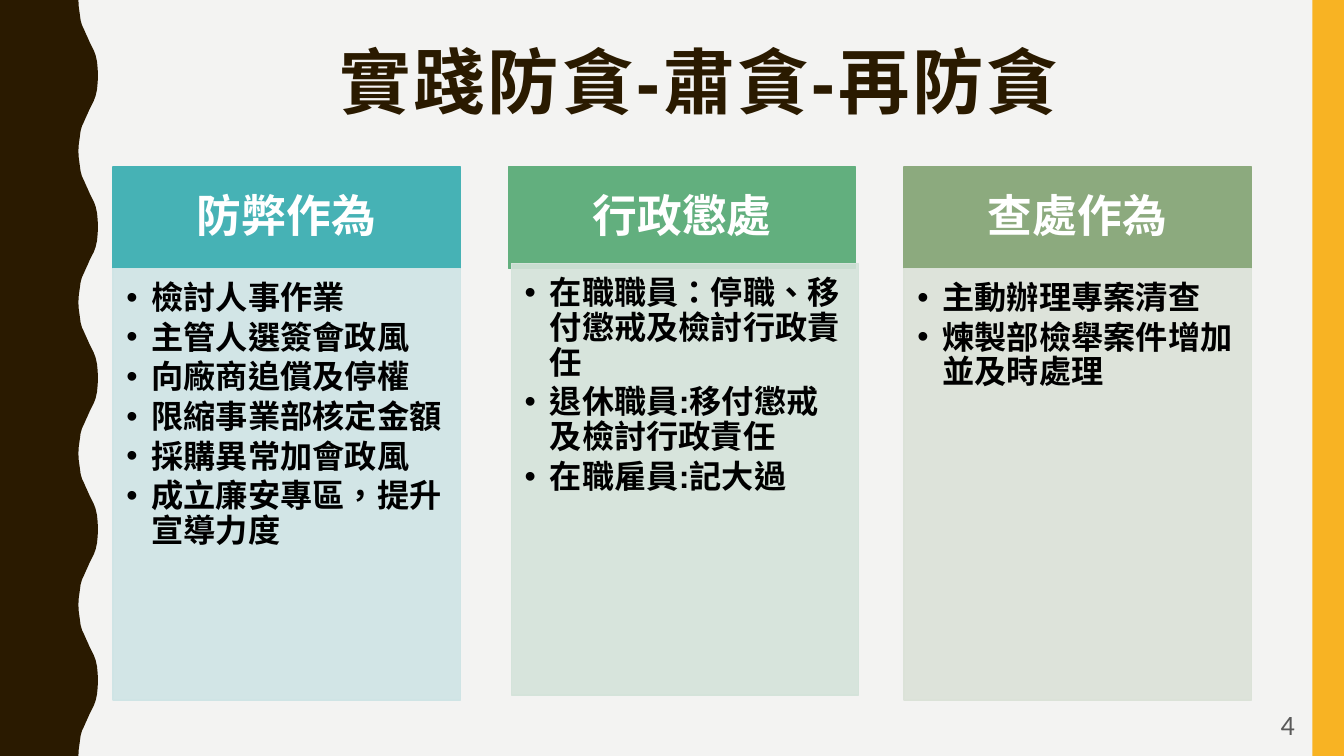
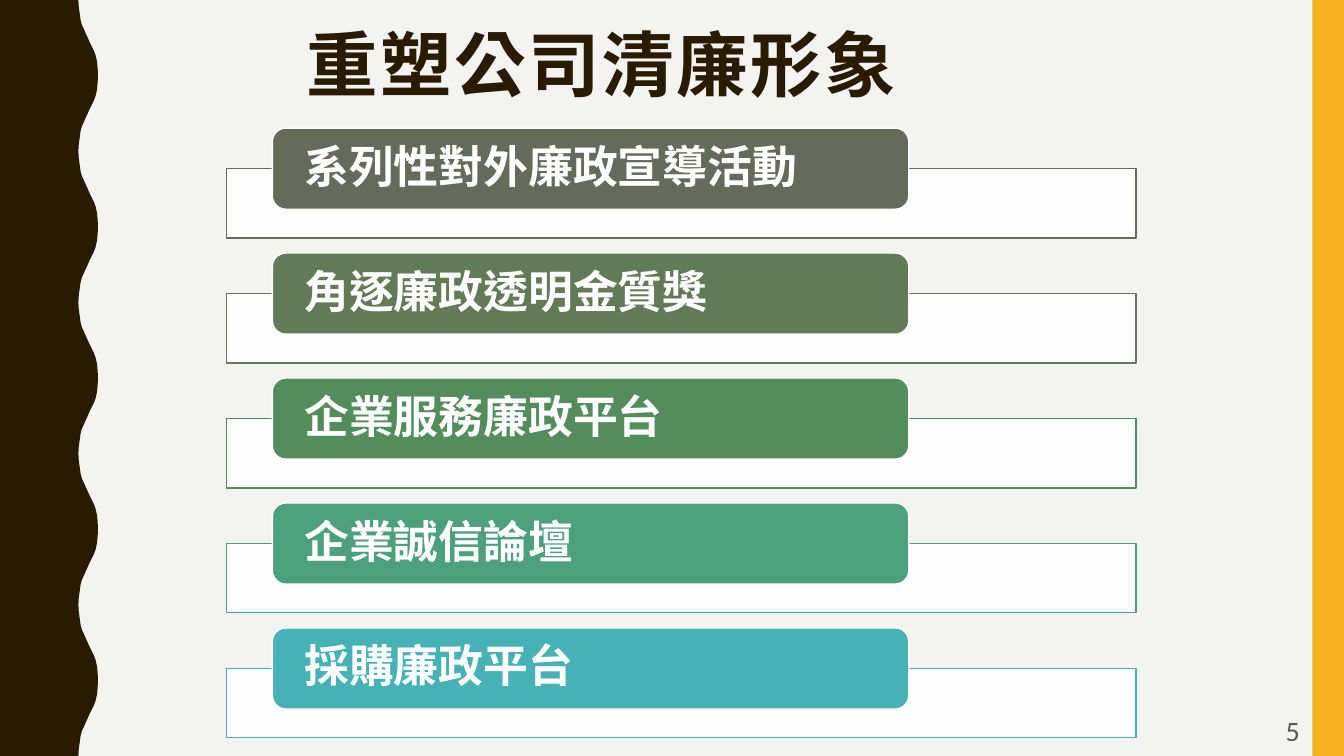
from lxml.etree import SubElement
from pptx import Presentation
from pptx.dml.color import RGBColor
from pptx.enum.shapes import MSO_SHAPE
from pptx.enum.text import MSO_ANCHOR, MSO_AUTO_SIZE, PP_ALIGN
from pptx.oxml.ns import qn
from pptx.util import Pt

PAGE_WIDTH, PAGE_HEIGHT = 960, 540
BROWN, AMBER, PAPER, WHITE, BLACK, GREY = (
    "2A1A00", "F8B323", "F3F3F2", "FFFFFF", "000000", "595959")

# Text formats used on both slides
TITLE = {"name": "Arial", "size": Pt(51), "bold": True, "color": BROWN}
LABEL = {"name": "Calibri", "size": Pt(32), "bold": True, "color": WHITE}
ITEM = {"name": "Calibri", "size": Pt(23), "bold": True, "color": BLACK}
NUMBER = {"name": "Calibri", "size": Pt(20), "bold": False, "color": GREY}

# Half a wave of the left band: (down, across) in points
WAVE_PERIOD = 108
HALF_WAVE = [(0, 56), (5, 56.3), (10, 57), (14.5, 57.6), (18, 58.6),
             (21, 60), (24, 61.3), (27, 62.7), (30, 64), (33, 65.5),
             (36, 67), (39.5, 68.3), (44, 69.3), (49, 69.8), (54, 70)]

COLUMNS = [
    {"heading": "防弊作為", "color": "46B2B5", "tint": "CFE4E5",
     "items": ["檢討人事作業", "主管人選簽會政風", "向廠商追償及停權",
               "限縮事業部核定金額", "採購異常加會政風",
               "成立廉安專區，提升宣導力度"]},
    {"heading": "行政懲處", "color": "62AF7E", "tint": "D4E3DA",
     "font": "Arial", "shift": (2, -3.5),
     "items": ["在職職員：停職、移付懲戒及檢討行政責任",
               "退休職員:移付懲戒及檢討行政責任", "在職雇員:記大過"]},
    {"heading": "查處作為", "color": "8CAA7E", "tint": "DBE2D8",
     "items": ["主動辦理專案清查", "煉製部檢舉案件增加並及時處理"]},
]

ACTIONS = [("系列性對外廉政宣導活動", "656A59"), ("角逐廉政透明金質獎", "607B56"),
           ("企業服務廉政平台", "528D5B"), ("企業誠信論壇", "4DA07E"),
           ("採購廉政平台", "46B2B5")]


def rgb(color):
    return RGBColor.from_string(color)


def points(box):
    return [Pt(length) for length in box]


def paint(shape, fill, line=None, opacity=None):
    """Give a shape its fill, its one-point line and its opacity in percent."""
    shape.shadow.inherit = False
    shape.fill.solid()
    shape.fill.fore_color.rgb = rgb(fill)
    if opacity:
        color = shape.fill._xPr.find(qn("a:solidFill"))[0]
        SubElement(color, qn("a:alpha"), val=str(opacity * 1000))
    if line:
        shape.line.color.rgb = rgb(line)
        shape.line.width = Pt(1)
    else:
        shape.line.fill.background()


def add_block(page, box, fill, line=None, opacity=None, kind=MSO_SHAPE.RECTANGLE):
    shape = page.shapes.add_shape(kind, *points(box))
    paint(shape, fill, line, opacity)
    return shape


def set_frame(shape, margins, anchor):
    """Margins run left, top, right, bottom."""
    frame = shape.text_frame
    left, top, right, bottom = points(margins)
    values = {"word_wrap": True, "auto_size": MSO_AUTO_SIZE.NONE,
              "vertical_anchor": anchor, "margin_left": left,
              "margin_top": top, "margin_right": right, "margin_bottom": bottom}
    for name, value in values.items():
        setattr(frame, name, value)
    return frame


def write(para, text, style, align=PP_ALIGN.LEFT, spacing=0.9, after=0):
    layout = {"alignment": align, "line_spacing": spacing,
              "space_before": Pt(0), "space_after": Pt(after)}
    for name, value in layout.items():
        setattr(para, name, value)
    span = para.add_run()
    span.text = text
    for name, value in style.items():
        if name == "color":
            span.font.color.rgb = rgb(value)
        else:
            setattr(span.font, name, value)
    properties = span._r.get_or_add_rPr()
    properties.set("lang", "zh-TW")
    return properties


def write_bullets(frame, items, style, indent=18):
    for index, text in enumerate(items):
        para = frame.paragraphs[0] if index == 0 else frame.add_paragraph()
        write(para, text, style, after=3.5)
        properties = para._p.get_or_add_pPr()
        properties.set("marL", str(Pt(indent)))
        properties.set("indent", str(-Pt(indent)))
        SubElement(properties, qn("a:buFont"), typeface="Arial")
        SubElement(properties, qn("a:buChar"), char="•")


def add_wave(page):
    """Brown band at the left edge with a waving right side."""
    mirrored = [(WAVE_PERIOD - down, across) for down, across in HALF_WAVE[-2::-1]]
    edge = [(across, start + down)
            for start in range(0, PAGE_HEIGHT, WAVE_PERIOD)
            for down, across in HALF_WAVE + mirrored]
    outline = page.shapes.build_freeform(0, 0, scale=1.0)
    outline.add_line_segments([points(spot) for spot in edge + [(0, PAGE_HEIGHT)]])
    wave = outline.convert_to_shape()
    paint(wave, BROWN)
    return wave


def dress_layout(layout, page):
    """Draw the two edge bands and move them to the layout shared by all pages."""
    layout.background.fill.solid()
    layout.background.fill.fore_color.rgb = rgb(PAPER)
    bands = [add_wave(page), add_block(page, (937.5, 0, 22.5, PAGE_HEIGHT), AMBER)]
    for position, band in enumerate(bands, start=2):
        layout.shapes.element.insert(position, band.element)


def add_title(page, box, text, align):
    title = page.shapes.title
    title.left, title.top, title.width, title.height = points(box)
    frame = set_frame(title, (7.2, 3.6, 7.2, 3.6), MSO_ANCHOR.TOP)
    write(frame.paragraphs[0], text, TITLE, align).set("spc", "200")


def add_page_number(page, box, number):
    label = page.shapes.add_textbox(*points(box))
    frame = set_frame(label, (7.2, 3.6, 7.2, 3.6), MSO_ANCHOR.MIDDLE)
    write(frame.paragraphs[0], str(number), NUMBER, PP_ALIGN.RIGHT, spacing=1.0)


def add_column(page, box, column, header=72.5):
    """Heading bar with a tinted list panel under it."""
    left, top, width, height = box
    bar = add_block(page, (left, top, width, header), column["color"], column["color"])
    frame = set_frame(bar, (18, 10, 18, 10), MSO_ANCHOR.MIDDLE)
    write(frame.paragraphs[0], column["heading"], LABEL, PP_ALIGN.CENTER)

    right, down = column.get("shift", (0, 0))
    panel_box = (left + right, top + header + down, width, height - header)
    panel = add_block(page, panel_box, column["tint"], column["tint"], opacity=90)
    frame = set_frame(panel, (9.5, 9.5, 12.5, 14.5), MSO_ANCHOR.TOP)
    style = {**ITEM, "name": column.get("font", ITEM["name"])}
    write_bullets(frame, column["items"], style)


def add_columns(page, box, columns, width=248):
    left, top, total, height = box
    step = (total - width) / (len(columns) - 1)
    for index, column in enumerate(columns):
        add_column(page, (left + index * step, top, width, height), column)


def add_action(page, box, text, color):
    """Outlined slot with a rounded label over its upper edge."""
    left, top, width, height = box
    add_block(page, (left, top + 29, width, height - 29), WHITE, color, opacity=90)
    label = add_block(page, (left + 32.5, top, width * 0.7, 58), color, WHITE,
                      kind=MSO_SHAPE.ROUNDED_RECTANGLE)
    frame = set_frame(label, (20, 0, 20, 0), MSO_ANCHOR.MIDDLE)
    write(frame.paragraphs[0], text, LABEL)


def add_actions(page, box, actions, row=78.5):
    left, top, width, height = box
    step = (height - row) / (len(actions) - 1)
    for index, (text, color) in enumerate(actions):
        add_action(page, (left, top + index * step, width, row), text, color)


def main():
    deck = Presentation()
    deck.slide_width, deck.slide_height = points((PAGE_WIDTH, PAGE_HEIGHT))
    layout = deck.slide_layouts.get_by_name("Title Only")

    # Three columns of measures
    page = deck.slides.add_slide(layout)
    dress_layout(layout, page)
    add_title(page, (98.5, 30, 801.5, 117.5), "實踐防貪-肅貪-再防貪", PP_ALIGN.CENTER)
    add_columns(page, (80.75, 119.25, 813, 380.75), COLUMNS)
    add_page_number(page, (710, 504, 222, 27), 4)

    # Stack of actions
    page = deck.slides.add_slide(layout)
    add_title(page, (211.5, 18, 688.5, 85.5), "重塑公司清廉形象", PP_ALIGN.LEFT)
    add_actions(page, (162, 91.5, 649.5, 435.5), ACTIONS)
    add_page_number(page, (713.5, 508, 222, 27), 5)

    deck.save("out.pptx")


if __name__ == "__main__":
    main()
